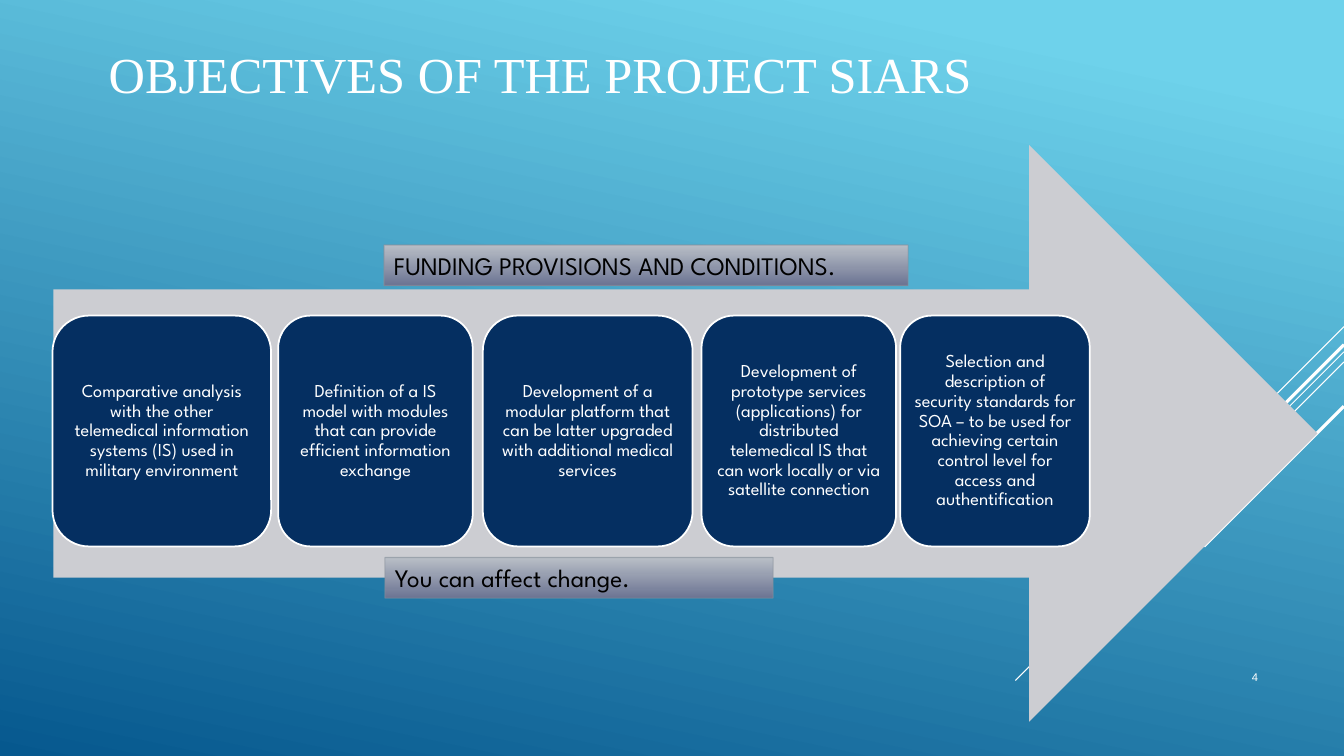
from lxml import etree
from pptx import Presentation
from pptx.dml.color import RGBColor
from pptx.enum.shapes import MSO_CONNECTOR, MSO_SHAPE
from pptx.enum.text import MSO_ANCHOR, PP_ALIGN
from pptx.oxml.ns import qn
from pptx.util import Pt

STRAIGHT = MSO_CONNECTOR.STRAIGHT
ARROW, CARD, BAR = MSO_SHAPE.RIGHT_ARROW, MSO_SHAPE.ROUNDED_RECTANGLE, MSO_SHAPE.RECTANGLE
LEFT, CENTER, RIGHT = PP_ALIGN.LEFT, PP_ALIGN.CENTER, PP_ALIGN.RIGHT
MIDDLE, BOTTOM = MSO_ANCHOR.MIDDLE, MSO_ANCHOR.BOTTOM

WHITE = RGBColor(0xFF, 0xFF, 0xFF)
BLACK = RGBColor(0x00, 0x00, 0x00)
SKY = RGBColor(0x6E, 0xD2, 0xEB)
OCEAN = RGBColor(0x06, 0x58, 0x8E)
SILVER = RGBColor(0xCC, 0xCD, 0xD2)
NAVY = RGBColor(0x05, 0x2F, 0x61)
BAR_TOP = RGBColor(0xB8, 0xBE, 0xC6)
BAR_BOTTOM = RGBColor(0x6C, 0x74, 0x93)
BAR_EDGE = RGBColor(0x89, 0x91, 0x9C)

SLIDE_WIDTH, SLIDE_HEIGHT = 960, 540
CARD_TOP, CARD_HEIGHT = 225.4, 164.9

RAYS = [(233.3, 72, 0.75), (251.3, 234.7, 0.75), (258.5, 149, 0.75),
        (246.2, 137.5, 2.25), (290.2, 100, 2.25)]

OBJECTIVES = [
    (37.5, 156.2, "Comparative analysis with the other telemedical information "
                  "systems (IS) used in military environment"),
    (198.7, 139, "Definition of a IS model with modules that can provide "
                 "efficient information exchange"),
    (344.9, 149.8, "Development of a modular platform that can be latter upgraded "
                   "with additional medical services"),
    (501.1, 139, "Development of prototype services (applications) for distributed "
                 "telemedical IS that can work locally or via satellite connection"),
    (643, 135.4, "Selection and description of security standards for SOA – to be used "
                 "for achieving certain control level for access and authentification"),
]

BANNERS = [
    (275, 398.2, 277.2, "You can affect change."),
    (274.3, 175, 374.4, "FUNDING PROVISIONS AND CONDITIONS."),
]


class SlideBuilder:
    body_font = "League Spartan"
    title_font = "Times New Roman"
    number_font = "Arial"

    def __init__(self, slide):
        self.slide = slide

    def gradient(self, fill, first, last, start, angle):
        fill.gradient()
        fill.gradient_angle = angle
        for stop, color, position in zip(fill.gradient_stops, (first, last), (start, 1)):
            stop.color.rgb = color
            stop.position = position

    def set_text(self, frame, text, size, font, color, align, anchor):
        frame.word_wrap = True
        frame.vertical_anchor = anchor
        paragraph = frame.paragraphs[0]
        paragraph.text = text
        paragraph.alignment = align
        paragraph.font.size = Pt(size)
        paragraph.font.name = font
        paragraph.font.color.rgb = color
        return paragraph

    def ray(self, top, reach, weight):
        line = self.slide.shapes.add_connector(
            STRAIGHT, Pt(SLIDE_WIDTH), Pt(top), Pt(SLIDE_WIDTH - reach), Pt(top + reach))
        line.line.color.rgb = WHITE
        line.line.width = Pt(weight)
        etree.SubElement(line._element.spPr, qn("a:effectLst"))

    def text(self, box, text, size, font, align, anchor):
        frame = self.slide.shapes.add_textbox(*map(Pt, box)).text_frame
        self.set_text(frame, text, size, font, WHITE, align, anchor)

    def shape(self, preset, box, fill=None):
        shape = self.slide.shapes.add_shape(preset, *map(Pt, box))
        shape.shadow.inherit = False
        if fill is not None:
            shape.fill.solid()
            shape.fill.fore_color.rgb = fill
        return shape

    def arrow(self, box):
        self.shape(ARROW, box, SILVER).line.fill.background()

    def card(self, left, width, text):
        card = self.shape(CARD, (left, CARD_TOP, width, CARD_HEIGHT), NAVY)
        card.line.color.rgb = WHITE
        card.line.width = Pt(1.25)
        frame = card.text_frame
        frame.margin_left = frame.margin_right = Pt(3.6)
        frame.margin_top = frame.margin_bottom = Pt(3.6)
        paragraph = self.set_text(frame, text, 13, self.body_font, WHITE, CENTER, MIDDLE)
        paragraph.line_spacing = 0.9

    def banner(self, left, top, width, text):
        bar = self.shape(BAR, (left, top, width, 29))
        self.gradient(bar.fill, BAR_TOP, BAR_BOTTOM, 0, 270)
        bar.line.color.rgb = BAR_EDGE
        bar.line.width = Pt(0.75)
        edge = bar._element.spPr.find(qn("a:ln")).find(".//" + qn("a:srgbClr"))
        etree.SubElement(edge, qn("a:alpha"), val="60000")
        self.set_text(bar.text_frame, text, 18, self.body_font, BLACK, LEFT, MIDDLE)


def main():
    deck = Presentation()
    deck.slide_width, deck.slide_height = Pt(SLIDE_WIDTH), Pt(SLIDE_HEIGHT)
    builder = SlideBuilder(deck.slides.add_slide(deck.slide_layouts[6]))
    builder.gradient(builder.slide.background.fill, SKY, OCEAN, 0.1, 258)
    for ray in RAYS:
        builder.ray(*ray)
    builder.text((0, 0, 772, 105), "OBJECTIVES OF THE PROJECT SIARS", 36,
                 builder.title_font, CENTER, MIDDLE)
    builder.arrow((38.2, 103.7, 902.9, 411.8))
    for objective in OBJECTIVES:
        builder.card(*objective)
    builder.text((815.8, 439.2, 90, 52.6), "4", 8, builder.number_font, RIGHT, BOTTOM)
    for banner in BANNERS:
        builder.banner(*banner)
    deck.save("out.pptx")


if __name__ == "__main__":
    main()
